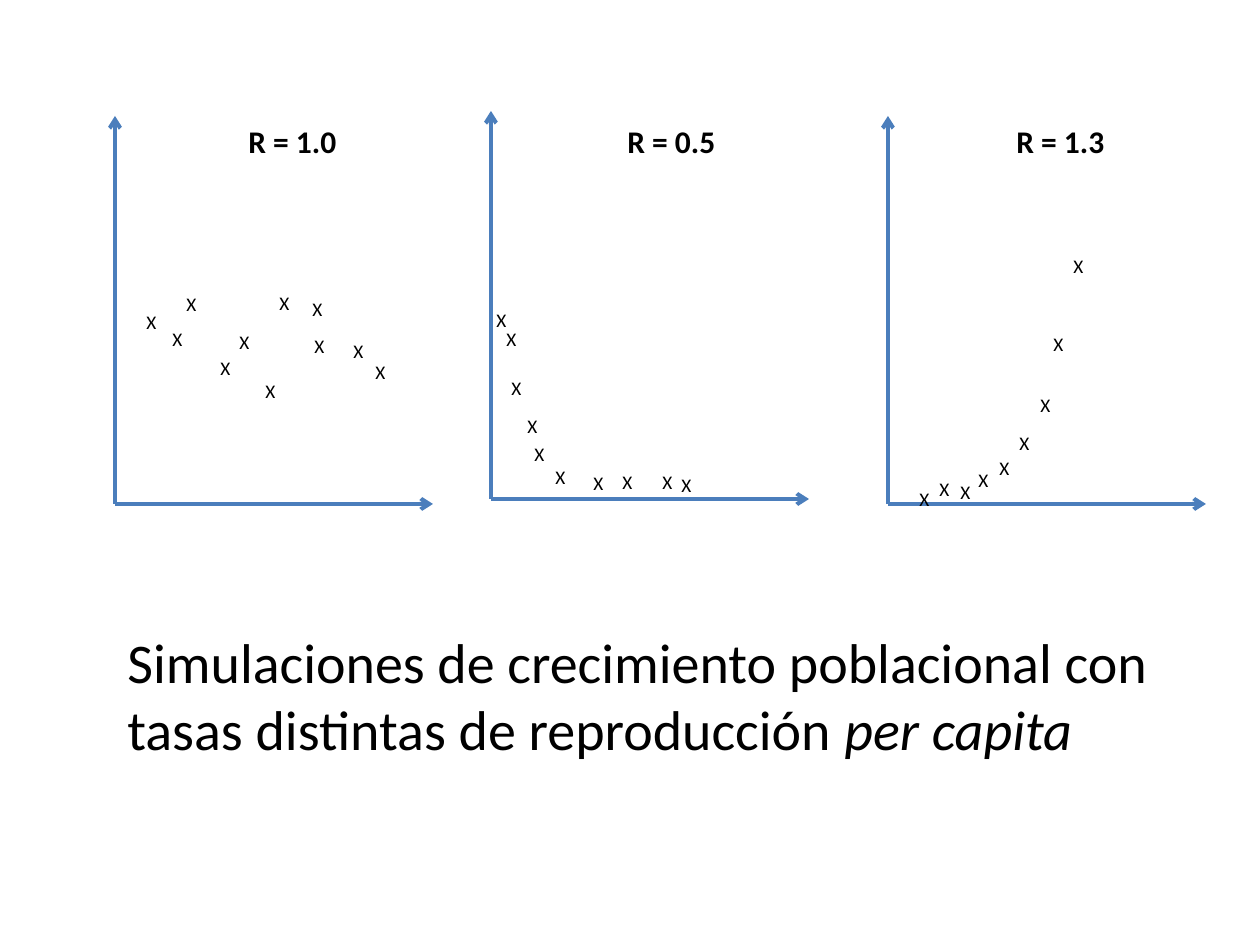
from lxml import etree
from pptx import Presentation
from pptx import util as u
from pptx.dml.color import RGBColor
from pptx.enum import shapes, text
from pptx.oxml.ns import qn

PX = 914400 // 126
COLORS = {"ink": "000000", "axis": "4B7EBC"}
FONT = "Calibri"

CAPTION = [
    ("Simulaciones de crecimiento poblacional con tasas distintas de reproducción ", False),
    ("per capita", True),
]
# Marks are the left and top of each X box, in px.
PANELS = [
    {"label": "R = 1.0", "left": 236, "origin": (115, 504),
     "marks": [(134, 304), (174, 286), (160, 321), (208, 350), (227, 324), (267, 285),
               (253, 373), (300, 291), (302, 328), (341, 333), (363, 354)]},
    {"label": "R = 0.5", "left": 615, "origin": (491, 499),
     "marks": [(484, 302), (494, 321), (499, 370), (515, 408), (522, 436), (543, 459),
               (581, 465), (610, 464), (650, 464), (669, 467)]},
    {"label": "R = 1.3", "left": 1004, "origin": (888, 504),
     "marks": [(907, 481), (927, 471), (948, 474), (966, 462), (987, 450), (1007, 425),
               (1028, 387), (1041, 326), (1061, 248)]},
]
AXIS_W, AXIS_H = 318, 388
LABEL_TOP, LABEL_SIZE = 116, (116, 50)
MARK_SIZE = (39, 37)

prs = Presentation()
prs.slide_width, prs.slide_height = u.Inches(10), u.Inches(7.5)
slide = prs.slides.add_slide(prs.slide_layouts[6])


def write(runs, left, top, width, height, size, bold=False):
    """Add a text box; runs is a string or a list of (words, italic)."""
    box = slide.shapes.add_textbox(*(n * PX for n in (left, top, width, height)))
    frame = box.text_frame
    frame.word_wrap = True
    frame.auto_size = text.MSO_AUTO_SIZE.SHAPE_TO_FIT_TEXT
    for words, italic in [(runs, False)] if isinstance(runs, str) else runs:
        run = frame.paragraphs[0].add_run()
        run.text = words
        font = run.font
        font.name, font.size = FONT, u.Pt(size)
        font.bold, font.italic = bold, italic
        font.color.rgb = RGBColor.from_string(COLORS["ink"])


def arrow(start, end):
    line = slide.shapes.add_connector(
        shapes.MSO_CONNECTOR.STRAIGHT, *(n * PX for n in start + end))
    line.line.width = u.Pt(2.25)
    line.line.color.rgb = RGBColor.from_string(COLORS["axis"])
    etree.SubElement(line.line._get_or_add_ln(), qn("a:tailEnd"), type="arrow")
    etree.SubElement(line._element.spPr, qn("a:effectLst"))


write(CAPTION, 115, 621, 1081, 149, size=32)
for panel in PANELS:
    x, y = panel["origin"]
    arrow((x, y), (x, y - AXIS_H))
    arrow((x, y), (x + AXIS_W, y))
    for mark in panel["marks"]:
        write("X", *mark, *MARK_SIZE, size=11)
    write(panel["label"], panel["left"], LABEL_TOP, *LABEL_SIZE, size=18, bold=True)

prs.save("out.pptx")
